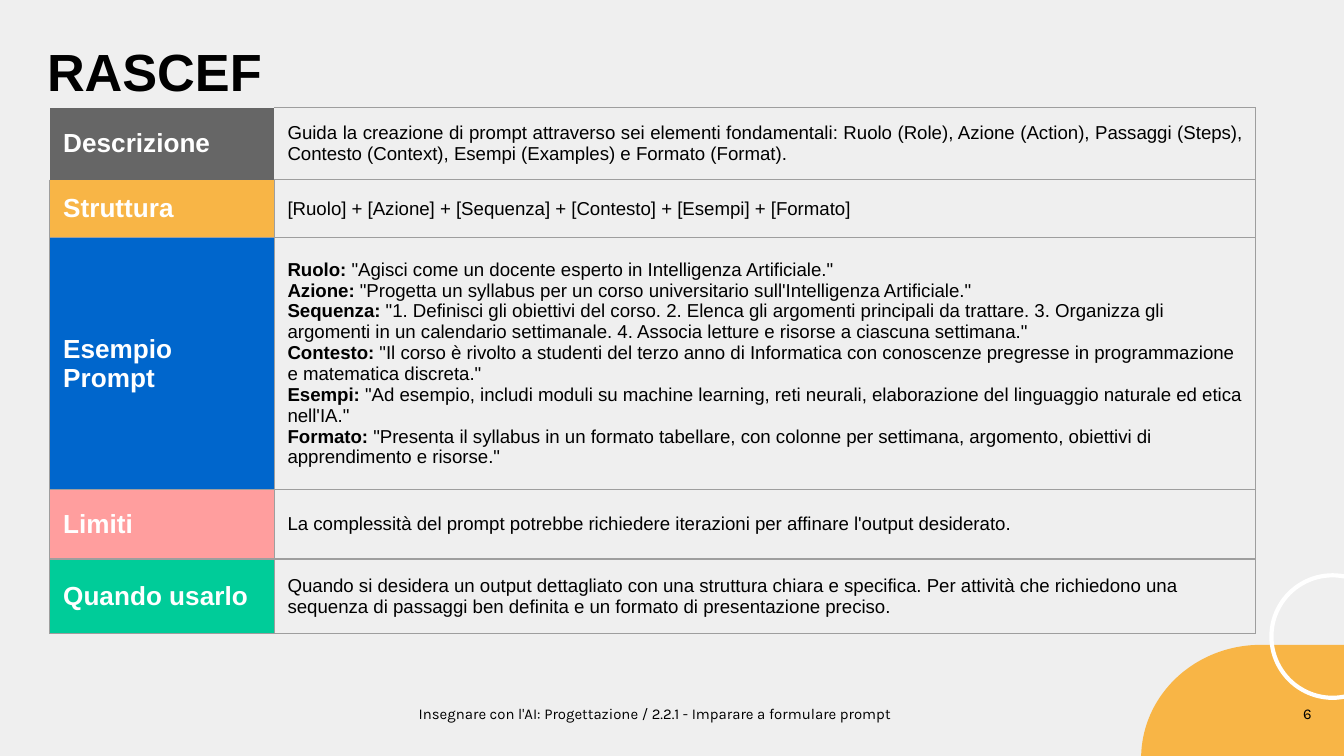
"""Builds the RASCEF slide: a titled five-row table with footer and corner decoration."""
from typing import NamedTuple

from lxml.etree import SubElement
from pptx import Presentation
from pptx.dml.color import RGBColor
from pptx.enum.shapes import MSO_SHAPE as Shape
from pptx.enum.text import MSO_ANCHOR as Anchor, PP_ALIGN as Align
from pptx.oxml.ns import qn
from pptx.util import Inches, Pt

BLACK, WHITE, GREY, ORANGE = "000000", "FFFFFF", "9E9E9E", "F8B546"

prs = Presentation()
prs.slide_width, prs.slide_height = Inches(10), Inches(5.625)


class Box(NamedTuple):
    """A frame in percent of the slide's width and height."""
    x: float
    y: float
    w: float
    h: float

    def emu(self) -> tuple[int, int, int, int]:
        """Return left, top, width and height in EMU."""
        return across(self.x), down(self.y), across(self.w), down(self.h)


class Run(NamedTuple):
    """A piece of text with its weight."""
    text: str
    bold: bool = False


class Row(NamedTuple):
    """A table row: label, fill, height in percent, paragraphs and drawn borders."""
    label: str
    fill: str
    height: float
    paragraphs: list[list[Run]]
    align: Align = Align.LEFT
    label_sides: str = "LRTB"
    body_sides: str = "LRTB"


def across(share: float) -> int:
    """Convert a percentage of the slide's width."""
    return round(prs.slide_width * share / 100)


def down(share: float) -> int:
    """Convert a percentage of the slide's height."""
    return round(prs.slide_height * share / 100)


def rgb(value: str) -> RGBColor:
    """Turn a hex string into a colour."""
    return RGBColor.from_string(value)


def write(tf, paragraphs: list[list[Run]], size: float, color: str,
          font: str = "Arial", align: Align = Align.LEFT) -> None:
    """Fill a text frame run by run."""
    for i, runs in enumerate(paragraphs):
        p = tf.add_paragraph() if i else tf.paragraphs[0]
        p.alignment = align
        for run in runs:
            r = p.add_run()
            r.text = run.text
            r.font.name, r.font.size, r.font.bold = font, Pt(size), run.bold
            r.font.color.rgb = rgb(color)


def set_margins(tf, inset: float) -> None:
    """Give a frame equal margins and wrapping."""
    tf.margin_left = tf.margin_right = tf.margin_top = tf.margin_bottom = Inches(inset)
    tf.word_wrap = True


def add_caption(s, box: Box, text: str, align: Align) -> None:
    """Add a small footer text."""
    tf = s.shapes.add_textbox(*box.emu()).text_frame
    set_margins(tf, 0.07)
    write(tf, [[Run(text)]], 8, BLACK, "Karla", align)


def add_ornament(s, kind: Shape, box: Box, fill: str | None, line: str | None,
                 rotation: float = 0) -> None:
    """Add a corner shape with a fill or an outline."""
    sp = s.shapes.add_shape(kind, *box.emu())
    sp.rotation, sp.shadow.inherit = rotation, False
    if fill:
        sp.fill.solid()
        sp.fill.fore_color.rgb = rgb(fill)
    else:
        sp.fill.background()
    if line:
        sp.line.color.rgb, sp.line.width = rgb(line), Pt(2.25)
    else:
        sp.line.fill.background()


def set_borders(cell, sides: str) -> None:
    """Draw the named sides of a cell and clear the others."""
    props = cell._tc.get_or_add_tcPr()
    for i, side in enumerate("LRTB"):
        ln = SubElement(props, qn(f"a:ln{side}"), w=str(Pt(0.75)))
        if side in sides:
            SubElement(SubElement(ln, qn("a:solidFill")), qn("a:srgbClr"), val=GREY)
        else:
            SubElement(ln, qn("a:noFill"))
        props.insert(i, ln)


def fill_cell(cell, paragraphs: list[list[Run]], size: float, color: str,
              align: Align, sides: str, fill: str | None = None) -> None:
    """Write and format one table cell."""
    cell.vertical_anchor = Anchor.MIDDLE
    cell.margin_left = cell.margin_right = Inches(0.1)
    cell.margin_top = cell.margin_bottom = Inches(0.1)
    write(cell.text_frame, paragraphs, size, color, align=align)
    if fill:
        cell.fill.solid()
        cell.fill.fore_color.rgb = rgb(fill)
    else:
        cell.fill.background()
    set_borders(cell, sides)


def add_grid(s, x: float, y: float, widths: list[float], rows: list[Row]) -> None:
    """Add the table of labels and descriptions."""
    box = Box(x, y, sum(widths), sum(row.height for row in rows))
    table = s.shapes.add_table(len(rows), len(widths), *box.emu()).table
    table.first_row = table.horz_banding = False
    for column, width in zip(table.columns, widths):
        column.width = across(width)
    for i, row in enumerate(rows):
        table.rows[i].height = down(row.height)
        fill_cell(table.cell(i, 0), [[Run(row.label, True)]], 14, WHITE,
                  row.align, row.label_sides, row.fill)
        fill_cell(table.cell(i, 1), row.paragraphs, 10, BLACK, row.align, row.body_sides)


EXAMPLES = {
    "Ruolo": "Agisci come un docente esperto in Intelligenza Artificiale.",
    "Azione": "Progetta un syllabus per un corso universitario sull'Intelligenza Artificiale.",
    "Sequenza": "1. Definisci gli obiettivi del corso. 2. Elenca gli argomenti principali da "
                "trattare. 3. Organizza gli argomenti in un calendario settimanale. "
                "4. Associa letture e risorse a ciascuna settimana.",
    "Contesto": "Il corso è rivolto a studenti del terzo anno di Informatica con conoscenze "
                "pregresse in programmazione e matematica discreta.",
    "Esempi": "Ad esempio, includi moduli su machine learning, reti neurali, elaborazione "
              "del linguaggio naturale ed etica nell'IA.",
    "Formato": "Presenta il syllabus in un formato tabellare, con colonne per settimana, "
               "argomento, obiettivi di apprendimento e risorse.",
}

ROWS = [
    Row("Descrizione", "666666", 9.5, [[Run(
        "Guida la creazione di prompt attraverso sei elementi fondamentali: Ruolo (Role), "
        "Azione (Action), Passaggi (Steps), Contesto (Context), Esempi (Examples) e "
        "Formato (Format).")]], Align.JUSTIFY, "", "RTB"),
    Row("Struttura", ORANGE, 7.6, [[Run(
        "[Ruolo] + [Azione] + [Sequenza] + [Contesto] + [Esempi] + [Formato]")]],
        label_sides="LRB"),
    Row("Esempio Prompt", "0066CC", 33.3, [
        [Run(f"{name}: ", True), Run(f'"{text}"')] for name, text in EXAMPLES.items()]),
    Row("Limiti", "FF9E9E", 9.2, [[Run(
        "La complessità del prompt potrebbe richiedere iterazioni per affinare "
        "l'output desiderato.")]]),
    Row("Quando usarlo", "00CC99", 9.9, [[Run(
        "Quando si desidera un output dettagliato con una struttura chiara e specifica. "
        "Per attività che richiedono una sequenza di passaggi ben definita e un formato "
        "di presentazione preciso.")]]),
]


def main() -> None:
    """Build and save the slide."""
    s = prs.slides.add_slide(prs.slide_layouts[5])
    s.background.fill.solid()
    s.background.fill.fore_color.rgb = rgb("EFEFEF")
    title = s.shapes.title
    title.left, title.top, title.width, title.height = Box(2.5, 3.2, 89.7, 12.4).emu()
    set_margins(title.text_frame, 0.1)
    title.text_frame.vertical_anchor = Anchor.MIDDLE
    write(title.text_frame, [[Run("RASCEF", True)]], 28, BLACK)
    add_caption(s, Box(3.8, 92, 89.9, 5.2),
                "Insegnare con l'AI: Progettazione / 2.2.1 - Imparare a formulare prompt",
                Align.CENTER)
    add_ornament(s, Shape.FLOWCHART_DELAY, Box(84.9, 85.3, 17.8, 30), ORANGE, None, 180)
    add_ornament(s, Shape.OVAL, Box(94.6, 76.1, 9.1, 16.2), None, WHITE)
    add_caption(s, Box(92.2, 92, 6.1, 8), "6", Align.RIGHT)
    add_grid(s, 3.7, 14.25, [16.7, 73], ROWS)
    prs.save("out.pptx")


if __name__ == "__main__":
    main()
